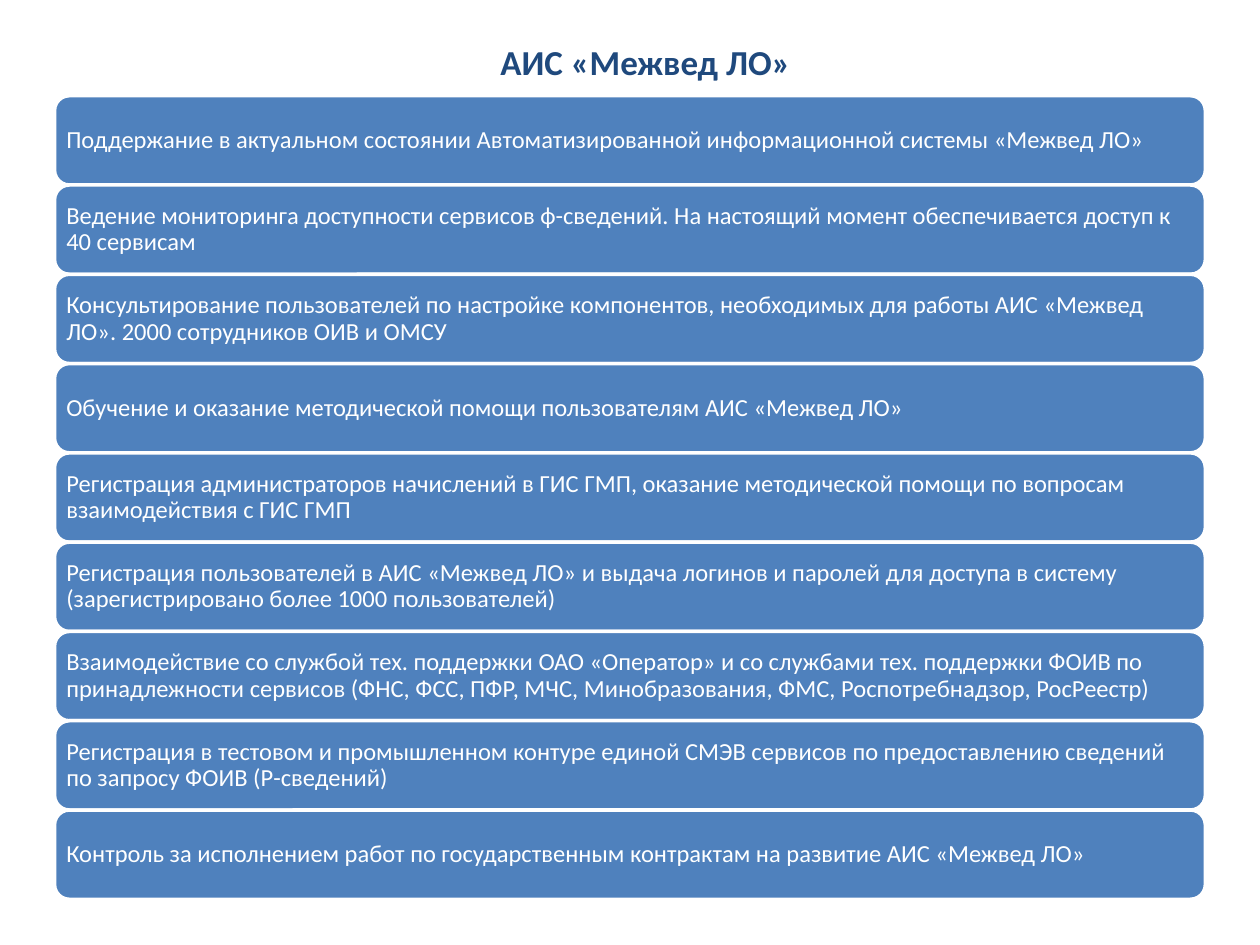
from pptx import Presentation
from pptx.dml.color import RGBColor
from pptx.enum.shapes import MSO_SHAPE
from pptx.enum.text import MSO_ANCHOR, MSO_AUTO_SIZE, PP_ALIGN
from pptx.util import Cm, Pt

NAVY = RGBColor(0x1F, 0x49, 0x7D)
BLUE = RGBColor(0x4F, 0x81, 0xBD)
WHITE = RGBColor(0xFF, 0xFF, 0xFF)
FONT = "Calibri"

TITLE = "АИС «Межвед ЛО»"
TASKS = [
    "Поддержание в актуальном состоянии Автоматизированной информационной системы «Межвед ЛО»",
    "Ведение мониторинга доступности сервисов ф-сведений. На настоящий момент обеспечивается "
    "доступ к 40 сервисам",
    "Консультирование пользователей по настройке компонентов, необходимых для работы "
    "АИС «Межвед ЛО». 2000 сотрудников ОИВ и ОМСУ",
    "Обучение и оказание методической помощи пользователям АИС «Межвед ЛО»",
    "Регистрация администраторов начислений в ГИС ГМП, оказание методической помощи "
    "по вопросам взаимодействия с ГИС ГМП",
    "Регистрация пользователей в АИС «Межвед ЛО» и выдача логинов и паролей для доступа "
    "в систему (зарегистрировано более 1000 пользователей)",
    "Взаимодействие со службой тех. поддержки ОАО «Оператор» и со службами тех. поддержки "
    "ФОИВ по принадлежности сервисов (ФНС, ФСС, ПФР, МЧС, Минобразования, ФМС, "
    "Роспотребнадзор, РосРеестр)",
    "Регистрация в тестовом и промышленном контуре единой СМЭВ сервисов по предоставлению "
    "сведений по запросу ФОИВ (Р-сведений)",
    "Контроль за исполнением работ по государственным контрактам на развитие АИС «Межвед ЛО»",
]


def write_text(shape, text, size, color, alignment, bold=False):
    frame = shape.text_frame
    frame.word_wrap = True
    frame.auto_size = MSO_AUTO_SIZE.NONE
    frame.vertical_anchor = MSO_ANCHOR.MIDDLE
    paragraph = frame.paragraphs[0]
    paragraph.alignment = alignment
    run = paragraph.add_run()
    run.text = text
    run.font.name = FONT
    run.font.size = size
    run.font.bold = bold
    run.font.color.rgb = color
    return frame


def place_title(slide, left, top, width, height):
    title = slide.shapes.title
    title.left, title.top, title.width, title.height = left, top, width, height
    write_text(title, TITLE, Pt(20), NAVY, PP_ALIGN.CENTER, bold=True)


def add_task_list(slide, left, top, width, height):
    """Stack the tasks as equal bars that fill the given box."""
    bar_height = height // len(TASKS)
    for index, task in enumerate(TASKS):
        bar = slide.shapes.add_shape(
            MSO_SHAPE.ROUNDED_RECTANGLE, left, top + index * bar_height, width, bar_height
        )
        bar.shadow.inherit = False
        bar.fill.solid()
        bar.fill.fore_color.rgb = BLUE
        bar.line.color.rgb = WHITE
        bar.line.width = Pt(2)
        frame = write_text(bar, task, Pt(14), WHITE, PP_ALIGN.LEFT)
        frame.margin_left = frame.margin_right = Cm(0.15)
        frame.margin_top = frame.margin_bottom = Cm(0.08)
        frame.paragraphs[0].line_spacing = 0.9


def main():
    presentation = Presentation()
    presentation.slide_width = Cm(25.4)
    presentation.slide_height = Cm(19.05)
    title_only = presentation.slide_layouts[5]
    slide = presentation.slides.add_slide(title_only)
    place_title(slide, Cm(1.9), Cm(0.53), Cm(22.23), Cm(1.4))
    add_task_list(slide, Cm(1.1), Cm(1.93), Cm(23.2), Cm(16.2))
    presentation.save("out.pptx")


if __name__ == "__main__":
    main()
